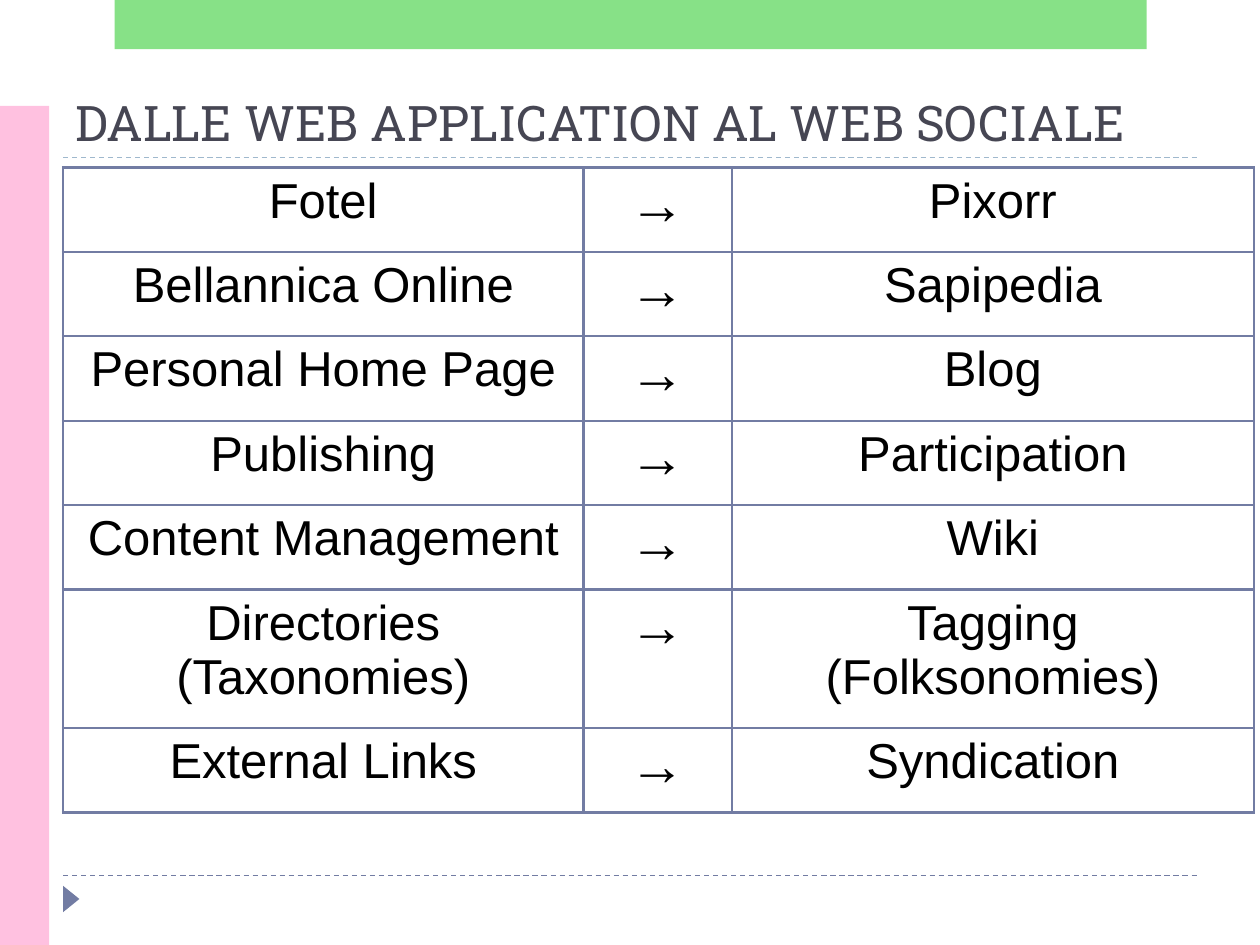
from dataclasses import dataclass
from lxml.etree import SubElement
from pptx import Presentation
from pptx.dml.color import RGBColor
from pptx.enum.dml import MSO_LINE
from pptx.enum.shapes import MSO_CONNECTOR, MSO_SHAPE as Kind
from pptx.enum.text import MSO_ANCHOR as Anchor, PP_ALIGN as Align
from pptx.oxml.ns import qn
from pptx.util import Inches, Pt

SLATE = RGBColor(0x72, 0x7C, 0xA3)
MIST = RGBColor(0x9F, 0xB8, 0xCD)
PINK = RGBColor(0xFF, 0xC1, 0xE0)
GREEN = RGBColor(0x62, 0xD8, 0x62)
INK = RGBColor(0x46, 0x46, 0x53)
BLACK = RGBColor(0, 0, 0)
WHITE = RGBColor(0xFF, 0xFF, 0xFF)

# The slide is a grid of 20 columns by 15 rows
COLS, ROWS = 20, 15
UNIT = Inches(0.5)


@dataclass
class Box:
    x: float
    y: float
    w: float
    h: float

    def place(self) -> list[int]:
        return [grid(v) for v in (self.x, self.y, self.w, self.h)]


@dataclass
class Part:
    kind: Kind
    box: Box
    fill: RGBColor
    turn: int = 0
    alpha: int = 100


@dataclass
class Rule:
    row: float
    color: RGBColor


PARTS = [
    Part(Kind.ISOSCELES_TRIANGLE, Box(0.92, 14.14, 0.42, 0.26), SLATE, turn=90),
    Part(Kind.RECTANGLE, Box(0, 1.68, 0.78, 13.32), PINK),
    Part(Kind.RECTANGLE, Box(1.82, 0, 16.38, 0.78), GREEN, alpha=76),
]
RULES = [Rule(13.9, SLATE), Rule(2.5, MIST)]
PAIRS = [
    ("Fotel", "Pixorr"),
    ("Bellannica Online", "Sapipedia"),
    ("Personal Home Page", "Blog"),
    ("Publishing", "Participation"),
    ("Content Management", "Wiki"),
    ("Directories (Taxonomies)", "Tagging (Folksonomies)"),
    ("External Links", "Syndication"),
]
WIDTHS = [8.26, 2.36, 8.28]
LOW, TALL = 1.34, 2.2


def grid(n: float) -> int:
    return round(n * UNIT)


def draw_part(slide, part: Part) -> None:
    shape = slide.shapes.add_shape(part.kind, *part.box.place())
    shape.shadow.inherit = False
    shape.rotation = part.turn
    shape.line.fill.background()
    shape.fill.solid()
    shape.fill.fore_color.rgb = part.fill
    if part.alpha < 100:
        tint = shape.element.spPr.find(qn("a:solidFill"))[0]
        SubElement(tint, qn("a:alpha"), val=str(part.alpha * 1000))


def draw_rule(slide, rule: Rule) -> None:
    y = grid(rule.row)
    line = slide.shapes.add_connector(
        MSO_CONNECTOR.STRAIGHT, grid(1), y, grid(COLS - 1), y)
    line.line.color.rgb = rule.color
    line.line.width = Pt(0.75)
    line.line.dash_style = MSO_LINE.DASH
    SubElement(line.element.spPr, qn("a:effectLst"))


def set_title(slide, text: str) -> None:
    title = slide.shapes.title
    title.left, title.top, title.width, title.height = Box(1, 1.1, 18, 1.4).place()
    frame = title.text_frame
    frame.text = text
    frame.word_wrap = True
    frame.vertical_anchor = Anchor.BOTTOM
    para = frame.paragraphs[0]
    para.alignment = Align.LEFT
    font = para.runs[0].font
    font.name, font.size, font.color.rgb = "Roboto Slab", Pt(28), INK


def set_cell(cell, text: str, size: int) -> None:
    cell.text_frame.text = text
    para = cell.text_frame.paragraphs[0]
    para.alignment = Align.CENTER
    font = para.runs[0].font
    font.name, font.size, font.color.rgb = "Arial", Pt(size), BLACK
    # Borders come before the fill in the cell's properties
    props = cell._tc.get_or_add_tcPr()
    for side in ("lnL", "lnR", "lnT", "lnB"):
        edge = SubElement(props, qn(f"a:{side}"), w=str(Pt(1.5)))
        fill = SubElement(edge, qn("a:solidFill"))
        SubElement(fill, qn("a:srgbClr"), val=str(SLATE))
    cell.fill.background()


def draw_table(slide) -> None:
    highs = [TALL if "(" in left else LOW for left, _ in PAIRS]
    box = Box(1, 2.66, sum(WIDTHS), sum(highs))
    table = slide.shapes.add_table(len(PAIRS), len(WIDTHS), *box.place()).table
    table.first_row = table.horz_banding = False
    for col, width in zip(table.columns, WIDTHS):
        col.width = grid(width)
    for row, high, (old, new) in zip(table.rows, highs, PAIRS):
        row.height = grid(high)
        for cell, text in zip(row.cells, (old, "→", new)):
            set_cell(cell, text, 32 if text == "→" else 28)


def main() -> None:
    deck = Presentation()
    deck.slide_width, deck.slide_height = grid(COLS), grid(ROWS)
    slide = deck.slides.add_slide(deck.slide_layouts[5])
    slide.background.fill.solid()
    slide.background.fill.fore_color.rgb = WHITE

    # Frame
    for rule in RULES:
        draw_rule(slide, rule)
    for part in PARTS:
        draw_part(slide, part)

    # Content
    set_title(slide, "DALLE WEB APPLICATION AL WEB SOCIALE")
    draw_table(slide)
    deck.save("out.pptx")


if __name__ == "__main__":
    main()
